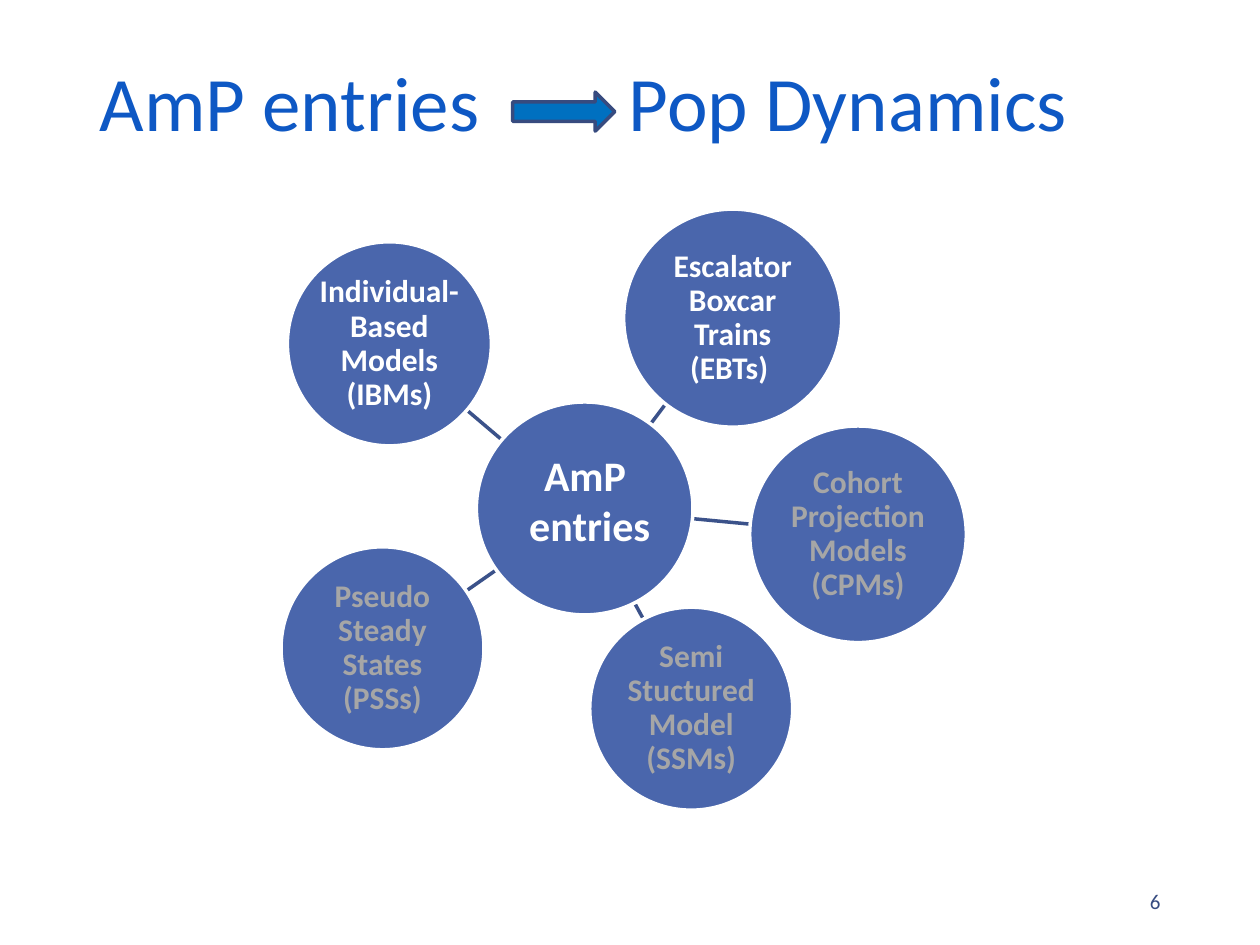
import pptx
import pptx.util
import pptx.dml.color
import pptx.enum.shapes
import pptx.enum.text
import pptx.oxml
import pptx.oxml.ns

Pt = pptx.util.Pt
RGBColor = pptx.dml.color.RGBColor
MSO_SHAPE = pptx.enum.shapes.MSO_SHAPE
PP_ALIGN = pptx.enum.text.PP_ALIGN

WHITE = RGBColor(0xFF, 0xFF, 0xFF)
GREY = RGBColor(0xA6, 0xA6, 0xA6)
TITLE_BLUE = RGBColor(0x0E, 0x58, 0xC4)
CIRCLE_BLUE = RGBColor(0x4A, 0x66, 0xAC)
SPOKE_BLUE = RGBColor(0x3B, 0x52, 0x8A)
ARROW_BLUE = RGBColor(0x00, 0x70, 0xC0)
ARROW_EDGE = RGBColor(0x37, 0x4B, 0x7F)
NUMBER_BLUE = RGBColor(0x37, 0x4C, 0x81)

MODELS = [
    ("Pseudo Steady States (PSSs)", GREY, (160.6, 312.5, 116), (299.5, 314.6, 266.4, 337.7)),
    ("Semi Stuctured Model (SSMs)", GREY, (337, 347, 116), (352.1, 325.4, 367.9, 354.2)),
    ("Cohort Projection Models (CPMs)", GREY, (428.4, 243.4, 123.8), (368.6, 293.8, 428.4, 299.5)),
    ("Escalator Boxcar Trains (EBTs) ", WHITE, (356.4, 119.5, 124.6), (360.7, 257, 380.2, 231.1)),
    ("Individual-Based Models (IBMs)", WHITE, (164.2, 138.2, 116.6), (299.5, 262.1, 266.4, 234)),
]


class SlideBuilder:
    font = "Calibri"
    line_width = 2

    def __init__(self, slide):
        self.slide = slide

    def set_text(self, shape, text, size, color, align, bold=False, spacing=1.0, margins=(7.2, 3.6), wrap=True):
        frame = shape.text_frame
        frame.text = text
        frame.word_wrap = wrap
        frame.auto_size = pptx.enum.text.MSO_AUTO_SIZE.NONE
        frame.vertical_anchor = pptx.enum.text.MSO_ANCHOR.MIDDLE
        frame.margin_left = frame.margin_right = Pt(margins[0])
        frame.margin_top = frame.margin_bottom = Pt(margins[1])
        for paragraph in frame.paragraphs:
            paragraph.alignment = align
            paragraph.line_spacing = spacing
            for run in paragraph.runs:
                run.font.name = self.font
                run.font.size = Pt(size)
                run.font.bold = bold
                run.font.color.rgb = color

    def title(self, text, left, top, width, height, tab):
        heading = self.slide.shapes.title
        heading.left, heading.top = Pt(left), Pt(top)
        heading.width, heading.height = Pt(width), Pt(height)
        self.set_text(heading, text, 44, TITLE_BLUE, PP_ALIGN.LEFT, spacing=0.9)
        properties = heading.text_frame.paragraphs[0]._p.get_or_add_pPr()
        properties.append(pptx.oxml.parse_xml(
            f'<a:tabLst {pptx.oxml.ns.nsdecls("a")}><a:tab pos="{Pt(tab)}" algn="l"/></a:tabLst>'))

    def shape(self, kind, left, top, width, height, fill, edge=None):
        shape = self.slide.shapes.add_shape(kind, Pt(left), Pt(top), Pt(width), Pt(height))
        shape.shadow.inherit = False
        shape.fill.solid()
        shape.fill.fore_color.rgb = fill
        if edge is None:
            shape.line.fill.background()
        else:
            shape.line.color.rgb = edge
            shape.line.width = Pt(self.line_width)
        return shape

    def circle(self, left, top, width, height):
        return self.shape(MSO_SHAPE.OVAL, left, top, width, height, CIRCLE_BLUE, WHITE)

    def model(self, text, color, left, top, diameter):
        circle = self.circle(left, top, diameter, diameter)
        self.set_text(circle, text, 18, color, PP_ALIGN.CENTER, bold=True, spacing=0.9, margins=(0.7, 0.7))

    def spoke(self, *ends):
        spoke = self.slide.shapes.add_connector(
            pptx.enum.shapes.MSO_CONNECTOR.STRAIGHT, *[Pt(end) for end in ends])
        spoke.line.color.rgb = SPOKE_BLUE
        spoke.line.width = Pt(self.line_width)
        spoke._element.spPr.append(pptx.oxml.parse_xml(f'<a:effectLst {pptx.oxml.ns.nsdecls("a")}/>'))

    def hub_label(self, text, left, top, width, height):
        label = self.shape(MSO_SHAPE.RECTANGLE, left, top, width, height, CIRCLE_BLUE)
        self.set_text(label, text, 24, WHITE, PP_ALIGN.CENTER, bold=True, wrap=False)

    def page_number(self, text, left, top, width, height):
        number = self.slide.shapes.add_textbox(Pt(left), Pt(top), Pt(width), Pt(height))
        self.set_text(number, text, 12, NUMBER_BLUE, PP_ALIGN.RIGHT)


def main():
    deck = pptx.Presentation()
    deck.slide_width, deck.slide_height = Pt(720), Pt(540)
    builder = SlideBuilder(deck.slides.add_slide(deck.slide_layouts[5]))

    builder.title("AmP entries\tPop Dynamics", 49.7, 8.6, 620.6, 104.4, tab=302.5)
    for _, _, _, spoke in MODELS:
        builder.spoke(*spoke)
    builder.circle(272.2, 229.7, 123.8, 121.7)
    for text, color, place, _ in MODELS:
        builder.model(text, color, *place)
    builder.page_number("6", 508.3, 500.4, 162, 28.8)
    builder.shape(MSO_SHAPE.RIGHT_ARROW, 293, 52.6, 58.3, 22.3, ARROW_BLUE, ARROW_EDGE)
    builder.hub_label("AmP \nentries", 294.5, 252.7, 85, 65.5)

    deck.save("out.pptx")


if __name__ == "__main__":
    main()
